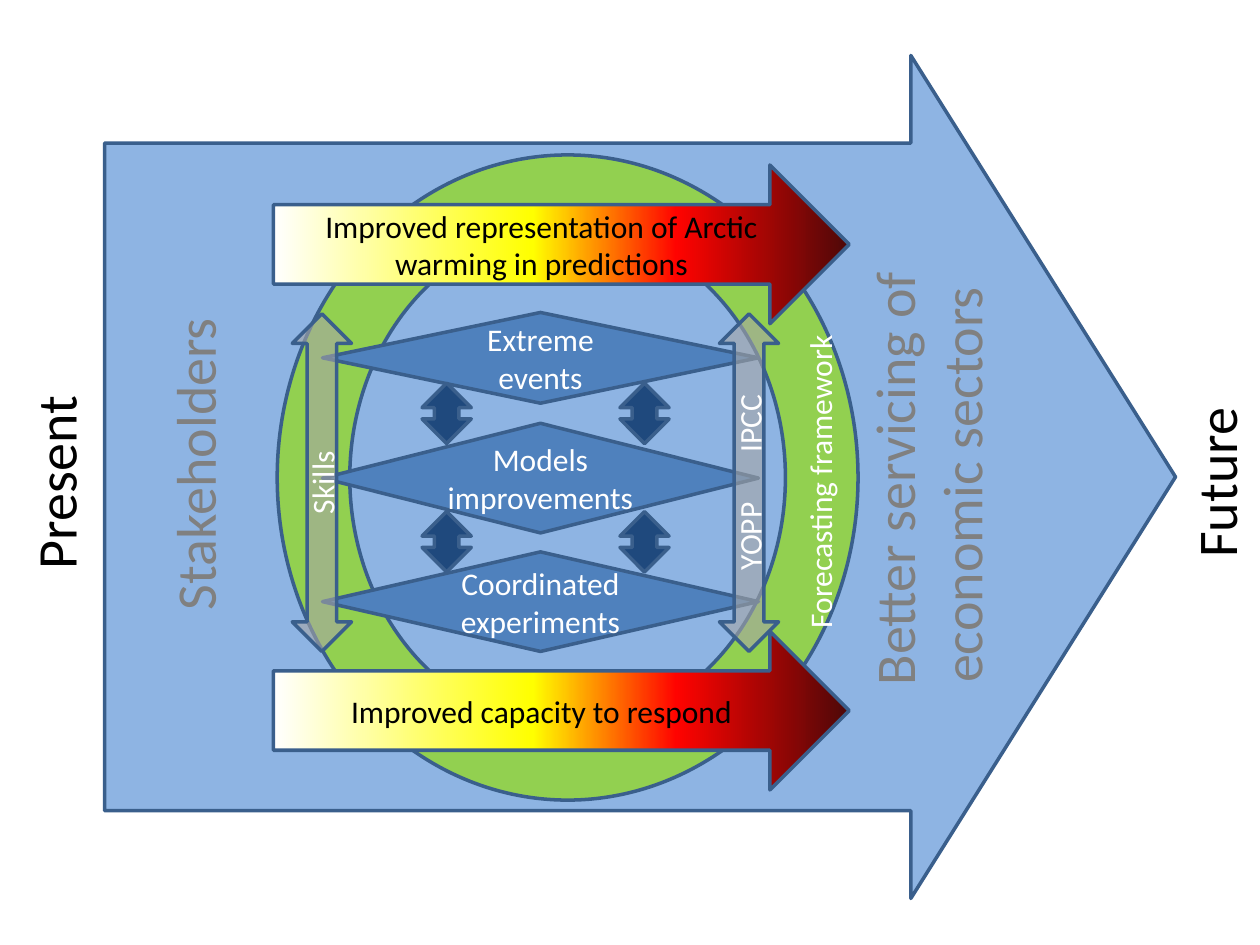
import itertools
from dataclasses import dataclass
from typing import Any, Optional

import pptx
import pptx.dml.color
import pptx.enum.shapes
import pptx.enum.text
import pptx.oxml.ns
import pptx.oxml.xmlchemy
import pptx.util

Inches = pptx.util.Inches
Pt = pptx.util.Pt
RGBColor = pptx.dml.color.RGBColor
Preset = pptx.enum.shapes.MSO_SHAPE
Align = pptx.enum.text.PP_ALIGN
qn = pptx.oxml.ns.qn
OxmlElement = pptx.oxml.xmlchemy.OxmlElement


@dataclass(frozen=True)
class Theme:
    font: str = "Calibri"
    label_size: int = 18
    heading_size: int = 32
    outline_width: int = 2
    outline: str = "3A5F8C"
    timeline: str = "8EB4E3"
    framework: str = "92D050"
    topic: str = "4F81BD"
    link: str = "1F497D"
    pillar: str = "A6A6A6"
    pillar_opacity: int = 60
    heading: str = "808080"
    light: str = "FFFFFF"
    dark: str = "000000"
    warming: tuple = ((0, "FFFFFF"), (45, "FFFF00"), (70, "FF0300"), (100, "4D0808"))


THEME = Theme()


@dataclass(frozen=True)
class Block:
    preset: Any
    left: float
    top: float
    width: float
    height: float
    fill: Optional[str] = None
    text: str = ""
    text_color: str = THEME.light
    opacity: int = 100
    adjustments: tuple = ()
    upward: bool = False
    word_gap: float = 0


@dataclass(frozen=True)
class Label:
    lines: tuple
    left: float
    top: float
    width: float
    height: float
    color: str
    size: int = THEME.heading_size
    align: Any = Align.LEFT


def apply_format(target: Any, values: dict) -> None:
    for name, value in values.items():
        setattr(target, name, value)


def write_text(paragraph: Any, text: str, size: int, color: str, align: Any) -> None:
    paragraph.alignment = align
    run = paragraph.add_run()
    run.text = text
    apply_format(run.font, {"name": THEME.font, "size": Pt(size)})
    run.font.color.rgb = RGBColor.from_string(color)


def fill_warming(shape: Any) -> None:
    shape.fill.gradient()
    shape.fill.gradient_angle = 0
    stops = shape._element.spPr.find(qn("a:gradFill")).find(qn("a:gsLst"))
    for stop in list(stops):
        stops.remove(stop)
    for position, color in THEME.warming:
        stop = OxmlElement("a:gs")
        stop.set("pos", str(position * 1000))
        value = OxmlElement("a:srgbClr")
        value.set("val", color)
        stop.append(value)
        stops.append(stop)


def fill_solid(shape: Any, color: str, opacity: int) -> None:
    shape.fill.solid()
    shape.fill.fore_color.rgb = RGBColor.from_string(color)
    if opacity < 100:
        alpha = OxmlElement("a:alpha")
        alpha.set("val", str(opacity * 1000))
        shape._element.spPr.find(qn("a:solidFill"))[0].append(alpha)


def draw_block(slide: Any, block: Block) -> None:
    bounds = map(Inches, (block.left, block.top, block.width, block.height))
    shape = slide.shapes.add_shape(block.preset, *bounds)
    shape.shadow.inherit = False
    for index, value in enumerate(block.adjustments):
        shape.adjustments[index] = value
    if block.fill:
        fill_solid(shape, block.fill, block.opacity)
    else:
        fill_warming(shape)
    shape.line.color.rgb = RGBColor.from_string(THEME.outline)
    shape.line.width = Pt(THEME.outline_width)
    if not block.text:
        return
    frame = shape.text_frame
    apply_format(frame, {"word_wrap": True,
                         "vertical_anchor": pptx.enum.text.MSO_ANCHOR.MIDDLE})
    if block.upward:
        frame._txBody.bodyPr.set("vert", "vert270")
    paragraph = frame.paragraphs[0]
    pieces = block.text.partition(" ") if block.word_gap else (block.text,)
    for piece in pieces:
        write_text(paragraph, piece, THEME.label_size, block.text_color, Align.CENTER)
    if block.word_gap:
        properties = paragraph.runs[1]._r.get_or_add_rPr()
        properties.set("spc", str(round(block.word_gap * 100)))


def draw_label(slide: Any, label: Label) -> None:
    bounds = map(Inches, (label.left, label.top, label.width, label.height))
    shape = slide.shapes.add_textbox(*bounds)
    shape.rotation = 270
    frame = shape.text_frame
    apply_format(frame, {"word_wrap": False,
                         "auto_size": pptx.enum.text.MSO_AUTO_SIZE.SHAPE_TO_FIT_TEXT})
    for index, line in enumerate(label.lines):
        paragraph = frame.add_paragraph() if index else frame.paragraphs[0]
        write_text(paragraph, line, label.size, label.color, label.align)


BACKDROP = (
    Block(Preset.RIGHT_ARROW, 0.83, 0.44, 8.5, 6.69, THEME.timeline,
          adjustments=(0.792, 0.314)),
    Block(Preset.DONUT, 2.2, 1.23, 4.61, 5.12, THEME.framework, adjustments=(0.125,)),
)
OUTCOMES = tuple(
    Block(Preset.RIGHT_ARROW, 2.17, top, 4.57, 1.26, text=text, text_color=THEME.dark)
    for top, text in (
        (1.31, "Improved representation of Arctic warming in predictions"),
        (5.01, "Improved capacity to respond"),
    )
)
TOPICS = tuple(
    Block(Preset.FLOWCHART_DECISION, 2.56, top, 3.46, height, THEME.topic, text)
    for top, height, text in (
        (2.48, 0.72, "Extreme events"),
        (3.36, 0.87, "Models improvements"),
        (4.38, 0.79, "Coordinated experiments"),
    )
)
PILLARS = tuple(
    Block(Preset.UP_DOWN_ARROW, left, 2.49, 0.47, 2.68, THEME.pillar, text,
          opacity=THEME.pillar_opacity, upward=True, word_gap=gap)
    for left, text, gap in ((2.32, "Skills", 0), (5.71, "YOPP IPCC", 24.4))
)
LINKS = tuple(
    Block(Preset.UP_DOWN_ARROW, left, top, 0.39, 0.48, THEME.link)
    for left, top in itertools.product((3.35, 4.92), (3.04, 4.06))
)
LABELS = (
    Label(("Stakeholders",), 0.27, 3.35, 2.54, 0.64, THEME.heading),
    Label(("Better servicing of", "economic sectors "), 5.6, 3.21, 3.52, 1.18,
          THEME.heading, align=Align.CENTER),
    Label(("Forecasting framework",), 5.23, 3.61, 2.55, 0.4, THEME.light,
          THEME.label_size),
    Label(("Present",), -0.36, 3.5, 1.59, 0.64, THEME.dark),
    Label(("Future",), 8.94, 3.5, 1.41, 0.64, THEME.dark),
)


def main() -> None:
    presentation = pptx.Presentation()
    apply_format(presentation, {"slide_width": Inches(10), "slide_height": Inches(7.5)})
    slide = presentation.slides.add_slide(presentation.slide_layouts[6])
    for block in BACKDROP + OUTCOMES + TOPICS + PILLARS:
        draw_block(slide, block)
    for label in LABELS:
        draw_label(slide, label)
    for block in LINKS:
        draw_block(slide, block)
    presentation.save("out.pptx")


if __name__ == "__main__":
    main()
